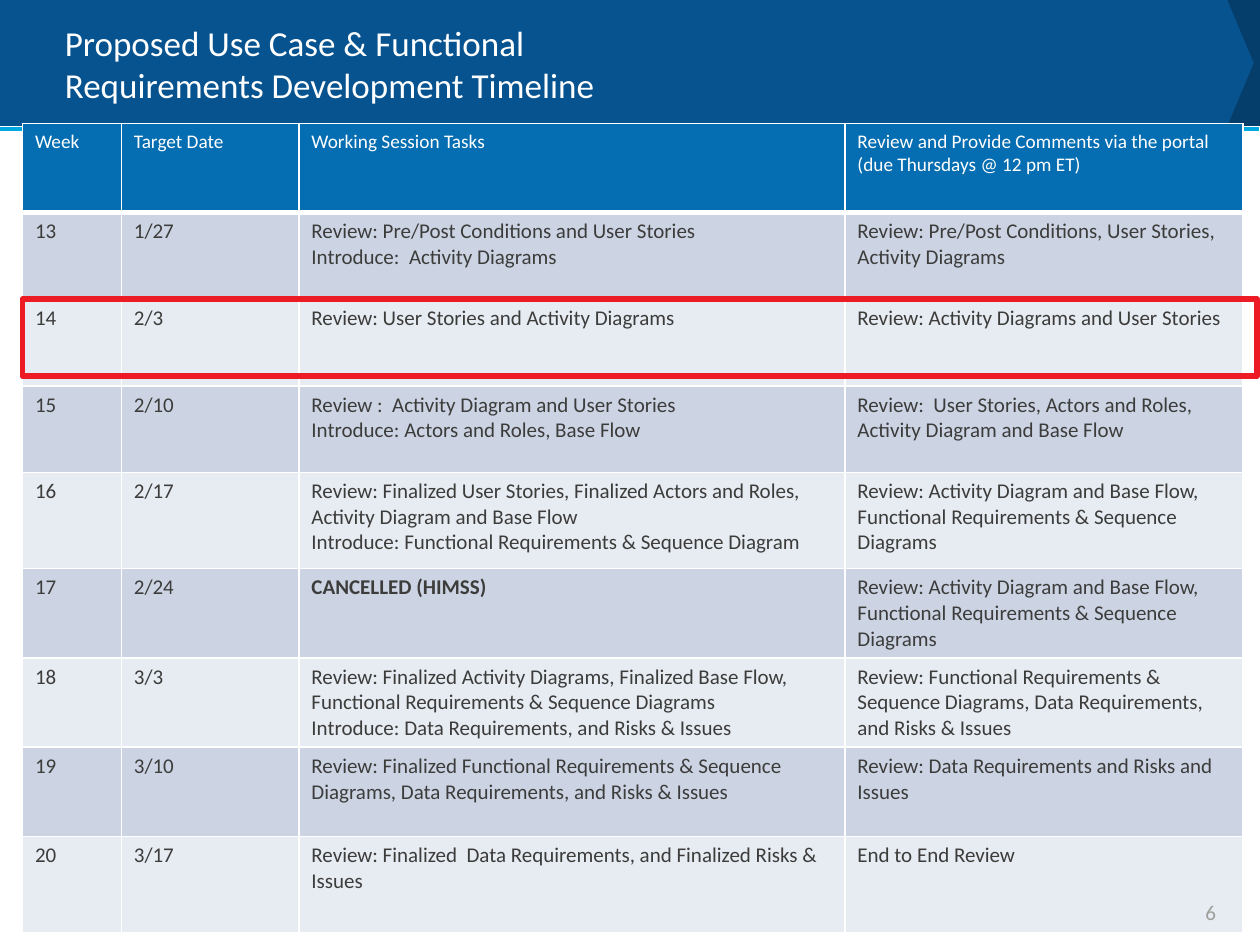
from lxml.etree import SubElement
from pptx import Presentation
from pptx.dml.color import RGBColor
from pptx.enum.shapes import MSO_CONNECTOR, MSO_SHAPE
from pptx.enum.text import MSO_ANCHOR, PP_ALIGN
from pptx.oxml.ns import qn
from pptx.util import Pt

WHITE = RGBColor(0xFF, 0xFF, 0xFF)
NAVY = RGBColor(0x05, 0x3E, 0x6B)
BLUE = RGBColor(0x07, 0x53, 0x8F)
CYAN = RGBColor(0x00, 0xA8, 0xE1)
HEADER_BLUE = RGBColor(0x05, 0x6D, 0xB1)
BAND_DARK = RGBColor(0xCC, 0xD4, 0xE4)
BAND_LIGHT = RGBColor(0xE7, 0xEB, 0xF2)
INK = RGBColor(0x3C, 0x3C, 0x3B)
GRAY = RGBColor(0x9E, 0x9E, 0x9C)
RED = RGBColor(0xED, 0x1C, 0x24)

CANCELLED = "CANCELLED (HIMSS)"
HEADINGS = ("Week", "Target Date", "Working Session Tasks",
            "Review and Provide Comments via the portal (due Thursdays @ 12 pm ET)")
SESSIONS = (
    ("13", "1/27",
     "Review: Pre/Post Conditions and User Stories\nIntroduce:  Activity Diagrams",
     "Review: Pre/Post Conditions, User Stories, Activity Diagrams"),
    ("14", "2/3", "Review: User Stories and Activity Diagrams",
     "Review: Activity Diagrams and User Stories"),
    ("15", "2/10",
     "Review :  Activity Diagram and User Stories\nIntroduce: Actors and Roles, Base Flow",
     "Review:  User Stories, Actors and Roles, Activity Diagram and Base Flow"),
    ("16", "2/17",
     "Review: Finalized User Stories, Finalized Actors and Roles, Activity Diagram and Base Flow\n"
     "Introduce: Functional Requirements & Sequence Diagram",
     "Review: Activity Diagram and Base Flow, Functional Requirements & Sequence Diagrams"),
    ("17", "2/24", CANCELLED,
     "Review: Activity Diagram and Base Flow, Functional Requirements & Sequence Diagrams"),
    ("18", "3/3",
     "Review: Finalized Activity Diagrams, Finalized Base Flow, "
     "Functional Requirements & Sequence Diagrams\n"
     "Introduce: Data Requirements, and Risks & Issues",
     "Review: Functional Requirements & Sequence Diagrams, Data Requirements, and Risks & Issues"),
    ("19", "3/10",
     "Review: Finalized Functional Requirements & Sequence Diagrams, "
     "Data Requirements, and Risks & Issues",
     "Review: Data Requirements and Risks and Issues"),
    ("20", "3/17", "Review: Finalized  Data Requirements, and Finalized Risks & Issues",
     "End to End Review"),
)
COLUMN_WIDTHS = (56.5, 101.5, 312, 227.5)
ROW_HEIGHTS = (51, 49.5, 49.5, 49.5, 55, 51, 51, 51, 55)


def write(frame, text, size=12, color=INK, bold=False, align=PP_ALIGN.LEFT):
    """Fill a text frame with evenly formatted text."""
    frame.word_wrap = True
    frame.text = text
    for paragraph in frame.paragraphs:
        paragraph.alignment = align
        for run in paragraph.runs:
            run.font.name = "Calibri"
            run.font.size = Pt(size)
            run.font.bold = bold
            run.font.color.rgb = color


def add_label(slide, box, text, **style):
    """Add a vertically centred text box."""
    frame = slide.shapes.add_textbox(*map(Pt, box)).text_frame
    frame.vertical_anchor = MSO_ANCHOR.MIDDLE
    write(frame, text, **style)


def add_pentagon(slide, box, color, point):
    """Add a filled pentagon without outline."""
    pentagon = slide.shapes.add_shape(MSO_SHAPE.PENTAGON, *map(Pt, box))
    pentagon.adjustments[0] = point
    pentagon.shadow.inherit = False
    pentagon.fill.solid()
    pentagon.fill.fore_color.rgb = color
    pentagon.line.fill.background()


def add_banner(slide, box):
    """Draw the title banner with its pointed end and underline."""
    left, top, width, height = box
    add_pentagon(slide, (left + width - 32.4, top, 32.4, height), NAVY, 0)
    add_pentagon(slide, (left, top, width - 3.6, height), BLUE, 0.21)
    underline_y = Pt(top + height + 1.5)
    underline = slide.shapes.add_connector(
        MSO_CONNECTOR.STRAIGHT, Pt(left), underline_y, Pt(left + width - 0.7), underline_y)
    underline.line.color.rgb = CYAN
    underline.line.width = Pt(2.25)
    SubElement(underline._element.spPr, qn("a:effectLst"))
    add_label(slide, (left + 30, top + 6, width - 60, height - 11),
              "Proposed Use Case & Functional \vRequirements Development Timeline",
              size=20, color=WHITE)


def set_borders(cell, bottom=1, top=1):
    """Give a cell white borders of the stated widths."""
    properties = cell._tc.get_or_add_tcPr()
    for side, width in (("L", 1), ("R", 1), ("T", top), ("B", bottom)):
        border = SubElement(properties, qn(f"a:ln{side}"), w=str(Pt(width)))
        fill = SubElement(border, qn("a:solidFill"))
        SubElement(fill, qn("a:srgbClr"), val=str(WHITE))


def add_timeline(slide, box):
    """Build the timeline table with its banded rows."""
    left, top = box
    rows = (HEADINGS,) + SESSIONS
    table = slide.shapes.add_table(
        len(rows), len(HEADINGS), Pt(left), Pt(top),
        Pt(sum(COLUMN_WIDTHS)), Pt(sum(ROW_HEIGHTS))).table
    for column, width in zip(table.columns, COLUMN_WIDTHS):
        column.width = Pt(width)
    for row_index, (texts, height) in enumerate(zip(rows, ROW_HEIGHTS)):
        table.rows[row_index].height = Pt(height)
        is_header = row_index == 0
        band = HEADER_BLUE if is_header else (BAND_LIGHT, BAND_DARK)[row_index % 2]
        for column_index, text in enumerate(texts):
            cell = table.cell(row_index, column_index)
            set_borders(cell, bottom=3 if is_header else 1, top=3 if row_index == 1 else 1)
            cell.fill.solid()
            cell.fill.fore_color.rgb = band
            write(cell.text_frame, text, size=11 if is_header else 12,
                  color=WHITE if is_header else INK, bold=text == CANCELLED)


def add_highlight(slide, box):
    """Outline the current week."""
    highlight = slide.shapes.add_shape(MSO_SHAPE.RECTANGLE, *map(Pt, box))
    highlight.shadow.inherit = False
    highlight.fill.background()
    highlight.line.color.rgb = RED
    highlight.line.width = Pt(3.25)


def main():
    """Build and save the timeline slide."""
    presentation = Presentation()
    presentation.slide_width, presentation.slide_height = Pt(720), Pt(540)
    slide = presentation.slides.add_slide(presentation.slide_layouts[6])
    add_banner(slide, (0, 0, 720, 72))
    add_timeline(slide, (12.8, 70.5))
    add_label(slide, (534, 512, 168, 18), "6", color=GRAY, align=PP_ALIGN.RIGHT)
    add_highlight(slide, (12.8, 171, 705.5, 44))
    presentation.save("out.pptx")


if __name__ == "__main__":
    main()
